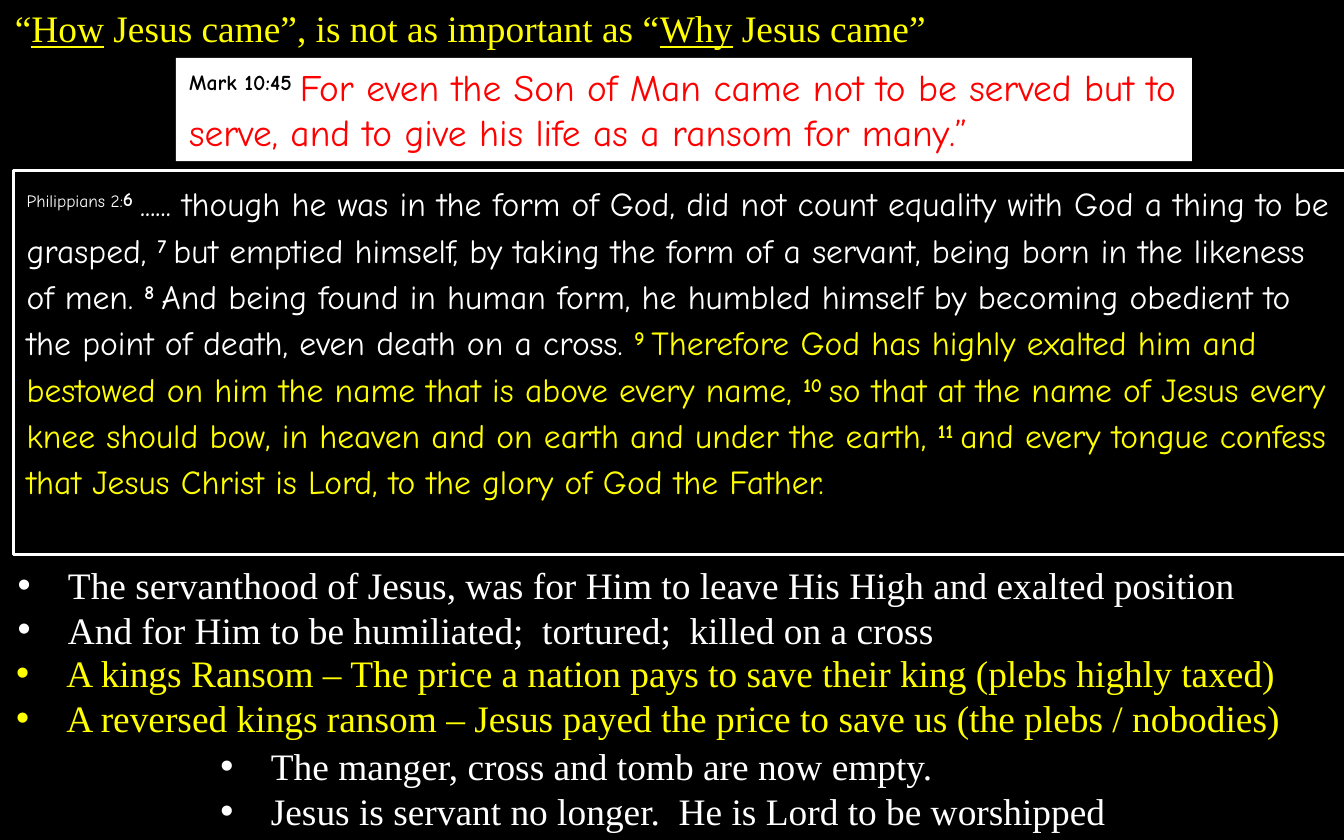
"""Build a slide on why Jesus came, with two Bible passages and three bullet lists."""
import pptx
import pptx.dml.color
import pptx.enum.shapes
import pptx.enum.text
import pptx.oxml
import pptx.oxml.ns
import pptx.util

Pt = pptx.util.Pt
BLACK = pptx.dml.color.RGBColor(0, 0, 0)
WHITE = pptx.dml.color.RGBColor(255, 255, 255)
YELLOW = pptx.dml.color.RGBColor(255, 255, 0)
RED = pptx.dml.color.RGBColor(255, 0, 0)
SERIF = "Times New Roman"
COMIC = "Comic Neue"


def prepare(box, left, top, width, height):
    box.left, box.top, box.width, box.height = Pt(left), Pt(top), Pt(width), Pt(height)
    frame = box.text_frame
    frame.word_wrap = True
    frame.auto_size = pptx.enum.text.MSO_AUTO_SIZE.NONE
    frame.vertical_anchor = pptx.enum.text.MSO_ANCHOR.TOP
    return frame


def style(para, font_name, size, color=None):
    para.alignment = pptx.enum.text.PP_ALIGN.LEFT
    para.space_before = Pt(0)
    para.font.name = font_name
    para.font.size = Pt(size)
    para.font.bold = False
    if color is not None:
        para.font.color.rgb = color


deck = pptx.Presentation()
deck.slide_width, deck.slide_height = Pt(720), Pt(450)
page = deck.slides.add_slide(deck.slide_layouts.get_by_name("Comparison"))
page.background.fill.solid()
page.background.fill.fore_color.rgb = BLACK
holders = {holder.placeholder_format.idx: holder for holder in page.placeholders}

frame = prepare(holders[0], 0.7, -0.7, 720, 31.7)
para = frame.paragraphs[0]
for words, underlined in [
    ("“", False),
    ("How", True),
    (" Jesus came”, is not as important as “", False),
    ("Why", True),
    (" Jesus came”", False),
]:
    span = para.add_run()
    span.text = words
    if underlined:
        span.font.underline = True
style(para, SERIF, 20, YELLOW)

lists = [
    (1, 2.2, 297.4, 718.5, WHITE, [
        "The servanthood of Jesus, was for Him to leave His High and exalted position",
        "And for Him to be humiliated;  tortured;  killed on a cross",
    ]),
    (2, 1.4, 344.9, 718.5, YELLOW, [
        "A kings Ransom – The price a nation pays to save their king (plebs highly taxed)",
        "A reversed kings ransom – Jesus payed the price to save us (the plebs / nobodies)",
    ]),
    (4, 110.9, 394.6, 609, WHITE, [
        "The manger, cross and tomb are now empty.",
        "Jesus is servant no longer.  He is Lord to be worshipped",
    ]),
]
for index, left, top, width, color, lines in lists:
    frame = prepare(holders[index], left, top, width, 55.4)
    frame.text = "\n".join(lines)
    for para in frame.paragraphs:
        properties = para._p.get_or_add_pPr()
        properties.set("marL", str(Pt(27)))
        properties.set("indent", str(-Pt(27)))
        for tag, attribute, value in [("buFont", "typeface", "Arial"), ("buChar", "char", "•")]:
            bullet = pptx.oxml.parse_xml(f'<a:{tag} {pptx.oxml.ns.nsdecls("a")} {attribute}="{value}"/>')
            properties.append(bullet)
        style(para, SERIF, 20, color)

unused = holders[3]._element
unused.getparent().remove(unused)

passages = [
    ((94.3, 31, 544.3, 55.4), 20, [
        ("Mark 10:45\u00a0", BLACK, True),
        ("For even the Son of Man came not to be served but to serve, "
         "and to give his life as a ransom for many.”", RED, False),
    ]),
    ((7.2, 91.4, 714.2, 205.9), 18, [
        ("Philippians 2:", WHITE, False),
        ("6\u00a0", WHITE, True),
        ("...... though he was in the form of God, did not count equality with God "
         "a thing to be grasped, ", WHITE, False),
        ("7\u00a0", WHITE, True),
        ("but emptied himself, by taking the form of a servant, being born in the "
         "likeness of men. ", WHITE, False),
        ("8\u00a0", WHITE, True),
        ("And being found in human form, he humbled himself by becoming obedient to "
         "the point of death, even death on a cross. ", WHITE, False),
        ("9\u00a0", YELLOW, True),
        ("Therefore God has highly exalted him and bestowed on him the name that is "
         "above every name, ", YELLOW, False),
        ("10\u00a0", YELLOW, True),
        ("so that at the name of Jesus every knee should bow, in heaven and on earth "
         "and under the earth, ", YELLOW, False),
        ("11\u00a0", YELLOW, True),
        ("and every tongue confess that Jesus Christ is Lord, to the glory of God "
         "the Father.", YELLOW, False),
    ]),
]
passage_boxes = []
for place, size, parts in passages:
    box = page.shapes.add_shape(pptx.enum.shapes.MSO_SHAPE.RECTANGLE, 0, 0, 0, 0)
    box.shadow.inherit = False
    para = prepare(box, *place).paragraphs[0]
    style(para, COMIC, size)
    for words, color, is_verse in parts:
        span = para.add_run()
        span.text = words
        span.font.color.rgb = color
        if is_verse:
            span.font.bold = True
        if is_verse or words == "Philippians 2:":
            span.font._element.set("baseline", "30000")
    passage_boxes.append(box)

mark_box, philippians_box = passage_boxes
mark_box.fill.solid()
mark_box.fill.fore_color.rgb = WHITE
mark_box.line.fill.background()
philippians_box.fill.background()
philippians_box.line.color.rgb = WHITE
philippians_box.line.width = Pt(1.5)
para = philippians_box.text_frame.paragraphs[0]
para.line_spacing = 1.15
para.space_after = Pt(10)
para.runs[0].font.size = Pt(16)

deck.save("out.pptx")
